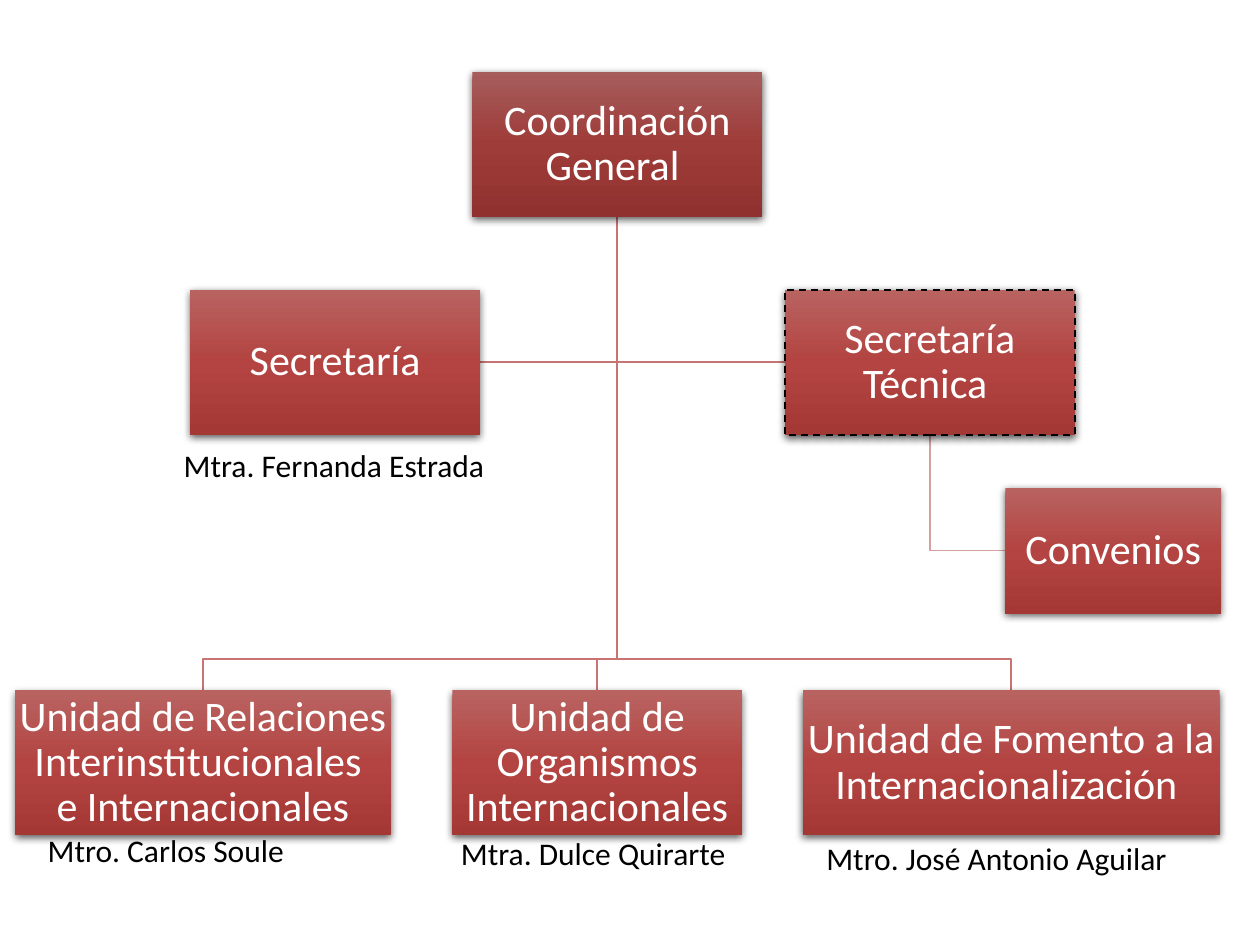
from copy import deepcopy

from lxml.etree import SubElement
from pptx import Presentation
from pptx.dml.color import RGBColor
from pptx.enum.dml import MSO_LINE
from pptx.enum.shapes import MSO_SHAPE
from pptx.enum.text import MSO_ANCHOR, MSO_AUTO_SIZE, PP_ALIGN
from pptx.oxml.ns import qn
from pptx.util import Inches, Pt

COLORS = {
    "head": ("A65D5C", "9E3C39", "91312F"),
    "unit": ("B96361", "B34441", "A43835"),
    "link": "C77472",
    "sublink": "D5A1A0",
    "white": "FFFFFF",
    "black": "000000",
}
FONT = "Calibri"

# key: (left, top, width, height, text lines)
BOXES = {
    "general": (3.75, 0.57, 2.3, 1.15, ["Coordinación General "]),
    "relaciones": (0.12, 5.48, 2.98, 1.15,
                   ["Unidad de Relaciones Interinstitucionales ", "e Internacionales"]),
    "organismos": (3.59, 5.48, 2.3, 1.15, ["Unidad de Organismos Internacionales"]),
    "fomento": (6.37, 5.48, 3.31, 1.15, ["Unidad de Fomento a la Internacionalización "]),
    "secretaria": (1.51, 2.3, 2.3, 1.15, ["Secretaría"]),
    "tecnica": (6.23, 2.3, 2.3, 1.15, ["Secretaría Técnica "]),
    "convenios": (7.98, 3.87, 1.71, 1, ["Convenios"]),
}
# (parent, child, side of the child where the link ends)
LINKS = [
    ("tecnica", "convenios", "left"),
    ("general", "tecnica", "left"),
    ("general", "secretaria", "right"),
    ("general", "fomento", "top"),
    ("general", "organismos", "top"),
    ("general", "relaciones", "top"),
]
PEOPLE = [
    (1.36, 3.49, 2.82, "Mtra. Fernanda Estrada"),
    (3.56, 6.57, 2.82, "Mtra. Dulce Quirarte"),
    (6.46, 6.61, 3.21, "Mtro. José Antonio Aguilar"),
    (0.28, 6.55, 3.21, "Mtro. Carlos Soule"),
]
BUS_Y = 5.23


def add_text(p, text, size, color):
    r = p.add_run()
    r.text = text
    r.font.name = FONT
    r.font.size = Pt(size)
    r.font.color.rgb = RGBColor.from_string(COLORS[color])


def style_box(sp, stops):
    """Give a box its vertical three-stop gradient and soft shadow."""
    sp.shadow.inherit = False
    shadow = SubElement(sp._element.spPr.find(qn("a:effectLst")), qn("a:outerShdw"),
                        blurRad=str(Pt(4.5)), dist=str(Pt(1.5)), dir="5400000",
                        rotWithShape="0")
    clr = SubElement(shadow, qn("a:srgbClr"), val=COLORS["black"])
    SubElement(clr, qn("a:alpha"), val="63000")

    sp.fill.gradient()
    sp.fill.gradient_angle = 270
    first = sp._element.spPr.find(".//" + qn("a:gs"))
    first.addnext(deepcopy(first))
    for stop, position, color in zip(sp.fill.gradient_stops, (0, 0.5, 1), stops):
        stop.position = position
        stop.color.rgb = RGBColor.from_string(color)


prs = Presentation()
prs.slide_width, prs.slide_height = Inches(10), Inches(7.5)
s = prs.slides.add_slide(prs.slide_layouts[6])

for parent, child, side in LINKS:
    left, top, width, height, _ = BOXES[parent]
    x, y = left + width / 2, top + height
    left, top, width, height, _ = BOXES[child]
    if side == "top":
        middle = left + width / 2
        points = [(x, BUS_Y), (middle, BUS_Y), (middle, top)]
    else:
        edge = left if side == "left" else left + width
        middle = top + height / 2
        points = [(x, middle), (edge, middle)]
    builder = s.shapes.build_freeform(Inches(x), Inches(y))
    builder.add_line_segments([(Inches(a), Inches(b)) for a, b in points], close=False)
    sp = builder.convert_to_shape()
    sp.shadow.inherit = False
    sp.fill.background()
    color = "link" if parent == "general" else "sublink"
    sp.line.color.rgb = RGBColor.from_string(COLORS[color])
    sp.line.width = Pt(1)

for key, (left, top, width, height, lines) in BOXES.items():
    sp = s.shapes.add_shape(MSO_SHAPE.RECTANGLE, Inches(left), Inches(top),
                            Inches(width), Inches(height))
    style_box(sp, COLORS["head" if key == "general" else "unit"])
    if key == "tecnica":
        sp.line.color.rgb = RGBColor.from_string(COLORS["black"])
        sp.line.width = Pt(1)
        sp.line.dash_style = MSO_LINE.DASH
    else:
        sp.line.fill.background()
    tf = sp.text_frame
    tf.word_wrap = True
    tf.vertical_anchor = MSO_ANCHOR.MIDDLE
    tf.margin_left = tf.margin_right = tf.margin_top = tf.margin_bottom = Inches(0.02)
    p = tf.paragraphs[0]
    p.alignment = PP_ALIGN.CENTER
    p.line_spacing = 0.9
    for i, line in enumerate(lines):
        if i:
            p.add_line_break()
        add_text(p, line, 24, "white")

for left, top, width, person in PEOPLE:
    sp = s.shapes.add_textbox(Inches(left), Inches(top), Inches(width), Inches(0.4))
    tf = sp.text_frame
    tf.word_wrap = True
    tf.auto_size = MSO_AUTO_SIZE.SHAPE_TO_FIT_TEXT
    add_text(tf.paragraphs[0], person, 18, "black")

prs.save("out.pptx")
